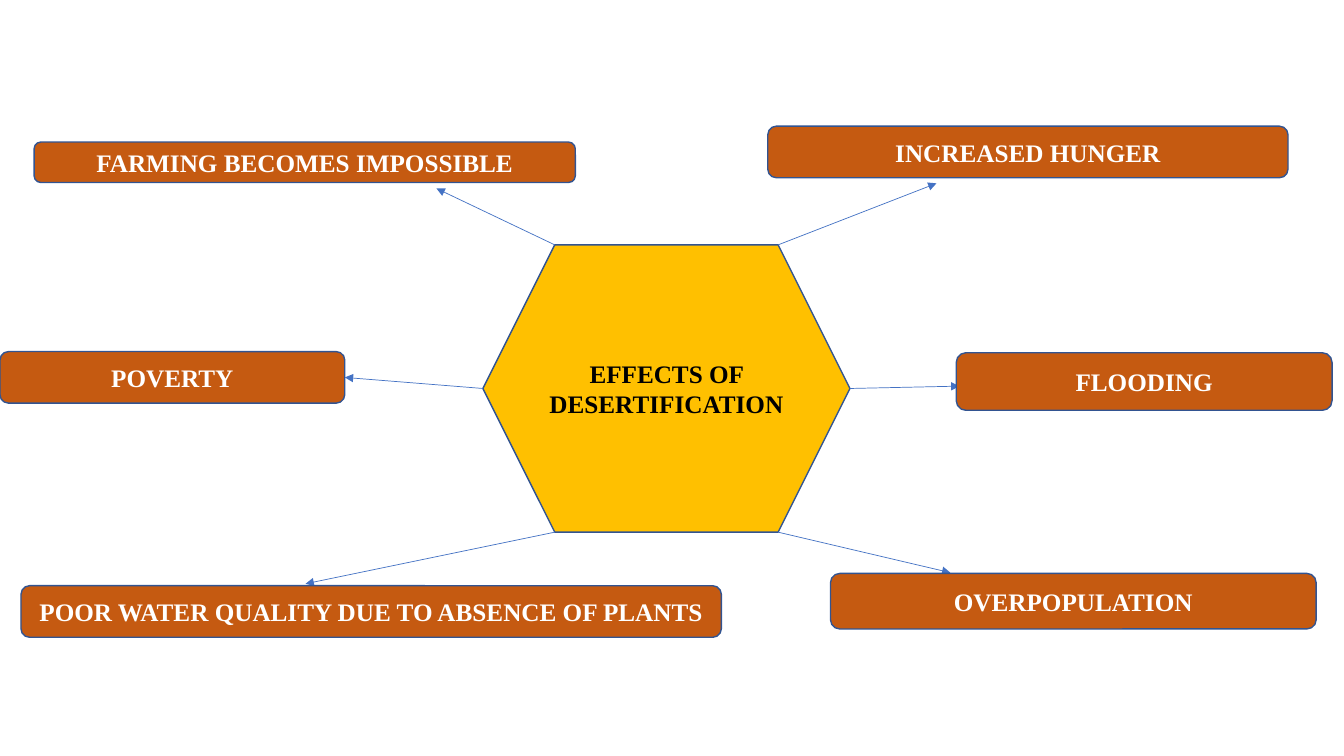
from typing import NamedTuple, Optional

from lxml import etree
from pptx import Presentation
from pptx import util as u
from pptx.dml.color import RGBColor
from pptx.enum import shapes, text
from pptx.oxml import ns

OUTLINE, ARROW = "325491", "4472C4"
FONT = {"name": "Times New Roman", "size": u.Pt(18), "bold": True}

# Central hexagon, in cm
HEX_X, HEX_Y, HEX_W, HEX_H = 12.17, 6.17, 9.25, 7.24
INSET = HEX_H / 4
LEFT, RIGHT = HEX_X, HEX_X + HEX_W
TOP, MIDDLE, BOTTOM = HEX_Y, HEX_Y + HEX_H / 2, HEX_Y + HEX_H


class Effect(NamedTuple):
    label: str
    box: tuple[float, float, float, float]
    corner: tuple[float, float]
    tip: Optional[tuple[float, float]] = None  # None: joined to the box's right side


EFFECTS = [
    Effect("FARMING BECOMES IMPOSSIBLE", (0.86, 3.58, 13.64, 1.02),
           (LEFT + INSET, TOP), (11, 4.75)),
    Effect("INCREASED HUNGER", (19.35, 3.18, 13.11, 1.3),
           (RIGHT - INSET, TOP), (23.6, 4.62)),
    Effect("FLOODING", (24.1, 8.89, 9.47, 1.45),
           (RIGHT, MIDDLE), (24.18, 9.73)),
    Effect("OVERPOPULATION", (20.93, 14.45, 12.24, 1.4),
           (RIGHT - INSET, BOTTOM), (23.95, 14.43)),
    Effect("POOR WATER QUALITY DUE TO ABSENCE OF PLANTS", (0.53, 14.76, 17.65, 1.3),
           (LEFT + INSET, BOTTOM), (7.7, 14.71)),
    Effect("POVERTY", (0, 8.86, 8.69, 1.3), (LEFT, MIDDLE)),
]


def color(value: str) -> RGBColor:
    return RGBColor.from_string(value)


def add_label(slide, kind, box: tuple, label: str, fill: str, ink: str):
    sp = slide.shapes.add_shape(kind, *map(u.Cm, box))
    sp.shadow.inherit = False
    sp.fill.solid()
    sp.fill.fore_color.rgb = color(fill)
    sp.line.color.rgb = color(OUTLINE)
    sp.line.width = u.Pt(1)
    tf = sp.text_frame
    tf.word_wrap = True
    tf.vertical_anchor = text.MSO_ANCHOR.MIDDLE
    p = tf.paragraphs[0]
    p.alignment = text.PP_ALIGN.CENTER
    r = p.add_run()
    r.text = label
    for name, value in FONT.items():
        setattr(r.font, name, value)
    r.font.color.rgb = color(ink)
    return sp


def add_arrow(slide, start: tuple, end: tuple):
    line = slide.shapes.add_connector(
        shapes.MSO_CONNECTOR.STRAIGHT, *map(u.Cm, start + end))
    line.line.color.rgb = color(ARROW)
    line.line.width = u.Pt(0.5)
    etree.SubElement(line.line._get_or_add_ln(), ns.qn("a:tailEnd"), type="triangle")
    etree.SubElement(line._element.spPr, ns.qn("a:effectLst"))
    return line


def main() -> None:
    prs = Presentation()
    prs.slide_width, prs.slide_height = u.Cm(33.87), u.Cm(19.05)
    slide = prs.slides.add_slide(prs.slide_layouts[6])

    # Central topic
    add_label(slide, shapes.MSO_SHAPE.HEXAGON, (HEX_X, HEX_Y, HEX_W, HEX_H),
              "EFFECTS OF DESERTIFICATION", "FFC000", "000000")

    # Effects around it, each with its arrow
    for effect in EFFECTS:
        if effect.tip:
            add_arrow(slide, effect.corner, effect.tip)
        sp = add_label(slide, shapes.MSO_SHAPE.ROUNDED_RECTANGLE, effect.box,
                       effect.label, "C55A11", "FFFFFF")
        if not effect.tip:
            add_arrow(slide, effect.corner, effect.corner).end_connect(sp, 3)

    prs.save("out.pptx")


if __name__ == "__main__":
    main()
